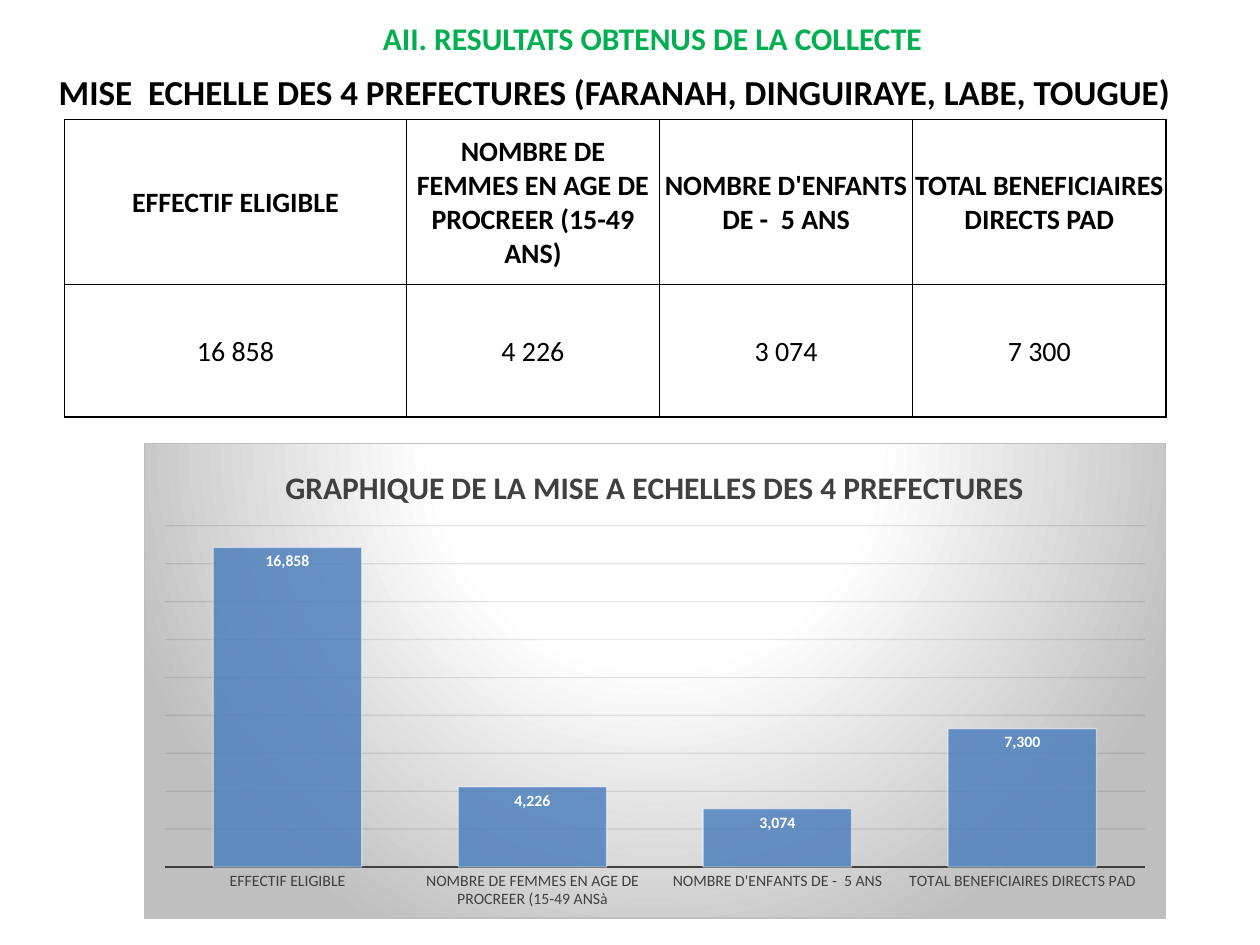
from dataclasses import dataclass

from lxml.etree import SubElement
from pptx import Presentation
from pptx.chart.data import CategoryChartData
from pptx.dml.color import RGBColor
from pptx.enum.chart import XL_CHART_TYPE, XL_LABEL_POSITION, XL_TICK_LABEL_POSITION, XL_TICK_MARK
from pptx.enum.text import MSO_ANCHOR, PP_ALIGN
from pptx.oxml import parse_xml
from pptx.oxml.ns import nsdecls, qn
from pptx.util import Pt


@dataclass(frozen=True)
class Theme:
    font: str = "Calibri"
    black: str = "000000"
    green: str = "00B050"
    white: str = "FFFFFF"
    blue: str = "4F81BD"
    gray: str = "404040"
    edge: str = "BFBFBF"
    grid: str = "0D0D0D"
    head: int = 20
    title: int = 18
    cell: int = 16
    base: int = 10
    small: int = 9


THEME = Theme()

HEADS = ["EFFECTIF ELIGIBLE", "NOMBRE DE FEMMES EN AGE DE PROCREER (15-49 ANS)",
         "NOMBRE D'ENFANTS DE -  5 ANS", "TOTAL BENEFICIAIRES DIRECTS PAD"]
CATS = [HEADS[0], "NOMBRE DE FEMMES EN AGE DE PROCREER (15-49 ANSà", *HEADS[2:]]
COUNTS = [16858, 4226, 3074, 7300]


def style(font, size, color=THEME.black, bold=False):
    font.name, font.size, font.bold = THEME.font, Pt(size), bold
    font.color.rgb = RGBColor.from_string(color)


def write(frame, text, size=THEME.cell, color=THEME.black, bold=True, align=PP_ALIGN.CENTER):
    par = frame.paragraphs[0]
    par.alignment = align
    run = par.add_run()
    run.text = text
    style(run.font, size, color, bold)


def add_label(slide, box, text, wrap=True, **form):
    frame = slide.shapes.add_textbox(*map(Pt, box)).text_frame
    frame.word_wrap = wrap
    write(frame, text, **form)


def set_line(line, color, width):
    line.color.rgb = RGBColor.from_string(color)
    line.width = Pt(width)


def fade(fill, percent):
    """Make a solid fill partly transparent."""
    tone = fill._xPr.find(qn("a:solidFill"))[0]
    SubElement(tone, qn("a:alpha"), val=str(percent * 1000))


def add_borders(cell):
    props = cell._tc.get_or_add_tcPr()
    for spot, side in enumerate("LRTB"):
        props.insert(spot, parse_xml(
            f'<a:ln{side} {nsdecls("a")} w="{Pt(1)}"><a:solidFill>'
            f'<a:srgbClr val="{THEME.black}"/></a:solidFill></a:ln{side}>'))


def add_grid(slide, box, rows, widths, heights):
    table = slide.shapes.add_table(len(rows), len(widths), *map(Pt, box)).table
    table.first_row = table.horz_banding = False
    for col, width in zip(table.columns, widths):
        col.width = Pt(width)
    for row, height in zip(table.rows, heights):
        row.height = Pt(height)
    for r, texts in enumerate(rows):
        for c, text in enumerate(texts):
            cell = table.cell(r, c)
            cell.fill.background()
            cell.vertical_anchor = MSO_ANCHOR.MIDDLE
            cell.margin_left = cell.margin_right = cell.margin_top = Pt(0.75)
            cell.margin_bottom = Pt(0)
            write(cell.text_frame, text, bold=r == 0)
            add_borders(cell)


def add_backdrop(chart):
    """Radial gradient and thin border behind the whole chart."""
    stops = "".join(f'<a:gs pos="{pos * 1000}"><a:srgbClr val="{tone}"/></a:gs>'
                    for pos, tone in [(0, THEME.white), (39, THEME.white), (100, THEME.edge)])
    chart.element.find(qn("c:chart")).addnext(parse_xml(
        f'<c:spPr {nsdecls("c", "a")}><a:gradFill><a:gsLst>{stops}</a:gsLst>'
        '<a:path path="circle">'
        '<a:fillToRect l="50000" t="-80000" r="50000" b="180000"/></a:path></a:gradFill>'
        f'<a:ln w="{Pt(0.75)}"><a:solidFill><a:srgbClr val="{THEME.edge}"/></a:solidFill></a:ln>'
        '</c:spPr>'))


def add_bars(slide, box, title):
    data = CategoryChartData(number_format="#,##0")
    data.categories = CATS
    data.add_series("Series 1", COUNTS)
    chart = slide.shapes.add_chart(XL_CHART_TYPE.COLUMN_CLUSTERED, *map(Pt, box), data).chart
    style(chart.font, THEME.base)
    chart.has_legend = False
    write(chart.chart_title.text_frame, title, size=THEME.title, color=THEME.gray)
    chart.chart_title.include_in_layout = False
    add_backdrop(chart)

    # Axes
    cat = chart.category_axis
    cat.major_tick_mark = cat.minor_tick_mark = XL_TICK_MARK.NONE
    style(cat.tick_labels.font, THEME.small, THEME.gray)
    set_line(cat.format.line, THEME.gray, 1.5)
    val = chart.value_axis
    val.minimum_scale, val.maximum_scale, val.major_unit = 0, 18000, 2000
    val.tick_label_position = XL_TICK_LABEL_POSITION.NONE
    val.visible = False
    val.has_major_gridlines = True
    rule = val.major_gridlines.format.line
    set_line(rule, THEME.grid, 0.75)
    fade(rule.fill, 10)

    # Bars and their values
    plot = chart.plots[0]
    plot.gap_width = 65
    plot.vary_by_categories = False
    bars = plot.series[0]
    bars.format.fill.solid()
    bars.format.fill.fore_color.rgb = RGBColor.from_string(THEME.blue)
    fade(bars.format.fill, 85)
    set_line(bars.format.line, THEME.white, 0.75)
    fade(bars.format.line.fill, 50)
    tags = bars.data_labels
    tags.show_value = True
    tags.number_format, tags.number_format_is_linked = "#,##0", False
    tags.position = XL_LABEL_POSITION.INSIDE_END
    style(tags.font, THEME.small, THEME.white, True)


def main():
    deck = Presentation()
    deck.slide_width, deck.slide_height = Pt(720), Pt(540)
    slide = deck.slides.add_slide(deck.slide_layouts[6])

    # Headings
    add_label(slide, (18.7, 36.7, 665.3, 31.7),
              "MISE  ECHELLE DES 4 PREFECTURES (FARANAH, DINGUIRAYE, LABE, TOUGUE)",
              size=THEME.head)
    add_label(slide, (211.7, 7.2, 325.4, 28.8), "AII. RESULTATS OBTENUS DE LA COLLECTE",
              wrap=False, size=THEME.title, color=THEME.green, align=PP_ALIGN.LEFT)

    # Table of counts
    counts = [f"{n:,}".replace(",", " ") for n in COUNTS]
    add_grid(slide, (37, 68.4, 629.3, 169.9), [HEADS, counts],
             [195.2] + [144.7] * 3, [94.3, 75.6])

    # Chart of the same counts
    add_bars(slide, (82.3, 253, 583.9, 272),
             "GRAPHIQUE DE LA MISE A ECHELLES DES 4 PREFECTURES")
    deck.save("out.pptx")


if __name__ == "__main__":
    main()
